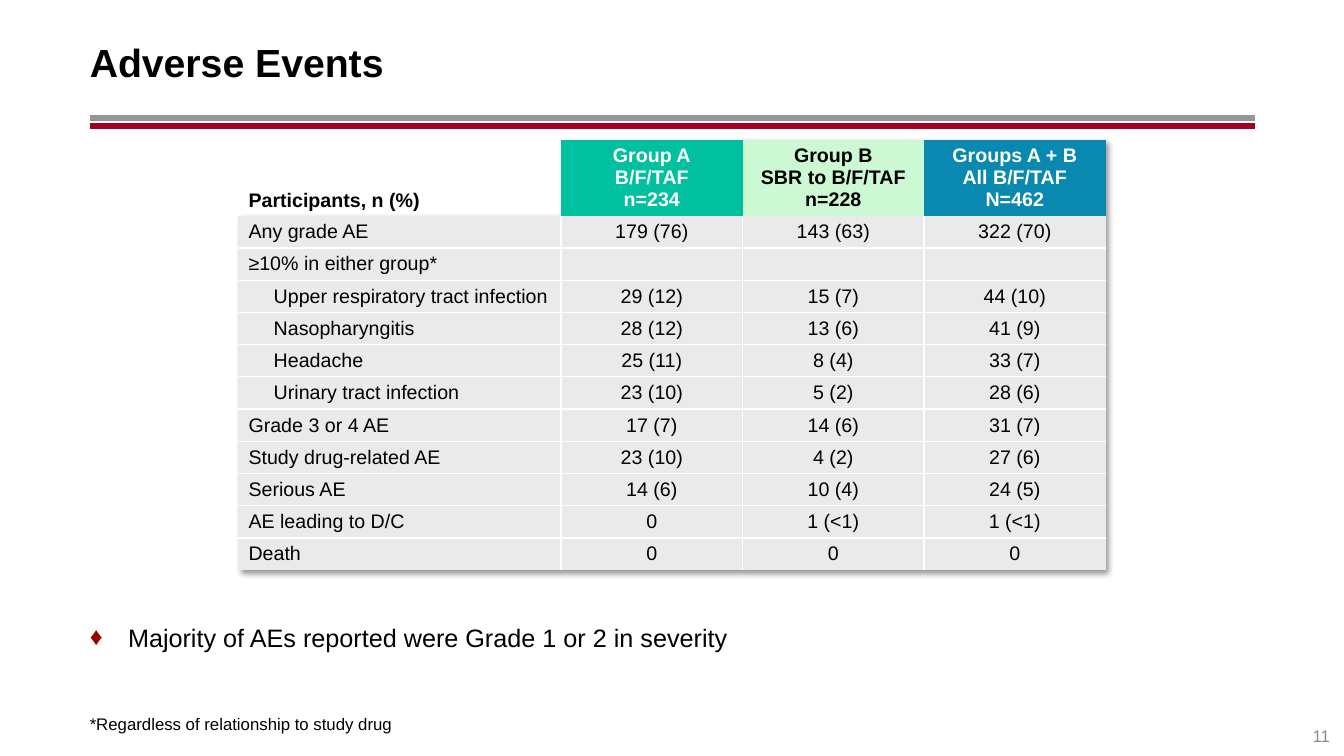
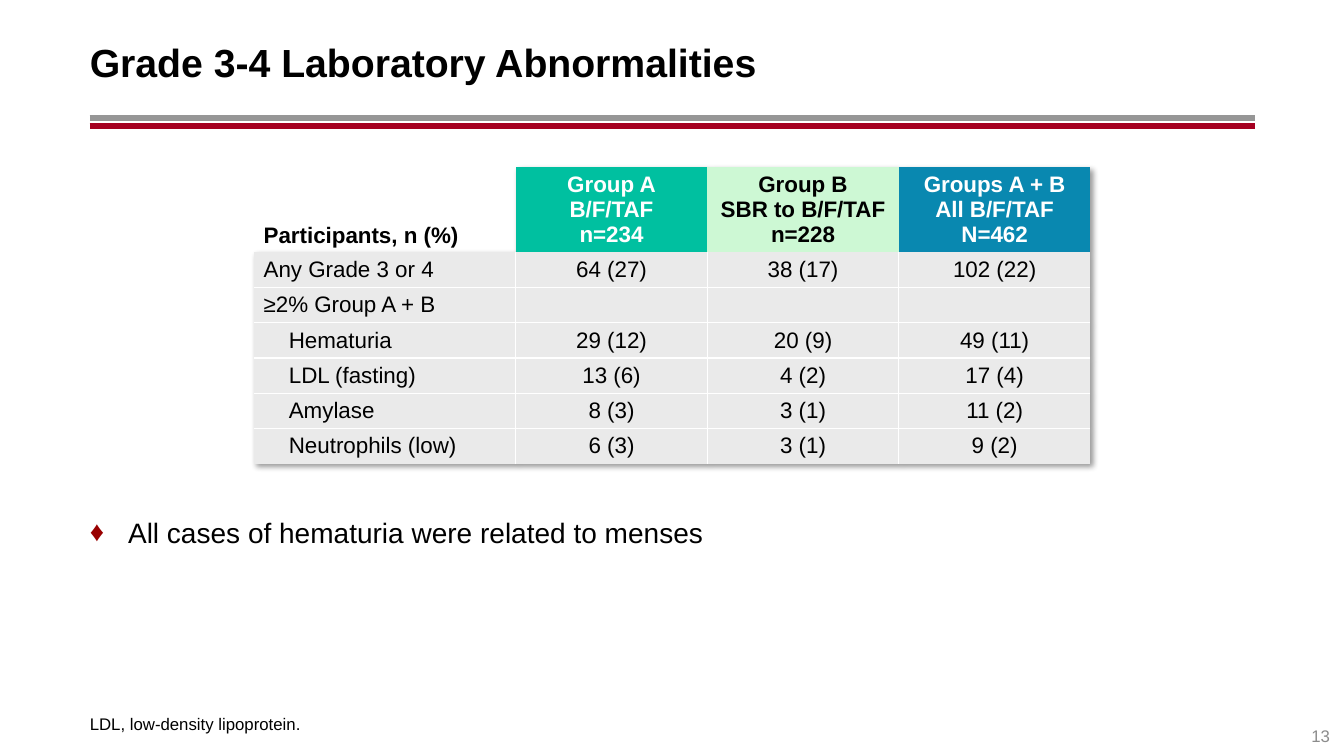
from dataclasses import dataclass

from lxml import etree
from pptx import Presentation
from pptx.dml.color import RGBColor
from pptx.enum.shapes import MSO_CONNECTOR
from pptx.enum.text import MSO_ANCHOR, MSO_AUTO_SIZE, PP_ALIGN
from pptx.oxml import parse_xml
from pptx.oxml.ns import nsdecls, qn
from pptx.util import Inches, Pt

LEFT, CENTER, RIGHT = PP_ALIGN.LEFT, PP_ALIGN.CENTER, PP_ALIGN.RIGHT
TOP, MIDDLE, BOTTOM = MSO_ANCHOR.TOP, MSO_ANCHOR.MIDDLE, MSO_ANCHOR.BOTTOM
STRAIGHT = MSO_CONNECTOR.STRAIGHT
NO_AUTOFIT = MSO_AUTO_SIZE.NONE
TWO_CONTENT_LAYOUT = 3
PLAIN_TABLE_STYLE = "{2D5ABB26-0587-4C30-8999-92F81FD0307C}"


@dataclass(frozen=True)
class Theme:
    """Colours, type sizes and the shared measures of the deck."""

    font: str = "Arial"
    ink: str = "000000"
    paper: str = "FFFFFF"
    upper_rule: str = "969696"
    lower_rule: str = "A50021"
    bullet: str = "990000"
    page_number: str = "8C8C8C"
    body_row: str = "EAEAEA"
    group_a: str = "00C0A0"
    group_b: str = "CDF8D4"
    all_groups: str = "0988B0"
    title_size: int = 28
    small_size: int = 12
    rule_weight: float = 4.25
    width: float = 13.33
    height: float = 7.5
    margin: float = 0.89
    content_width: float = 11.56
    hanging: float = 0.38
    sub_indent: float = 0.25


@dataclass(frozen=True)
class TableLayout:
    """Measures of one results table."""

    top: float
    label_width: float
    group_width: float
    header_height: float
    row_height: float
    size: int


THEME = Theme()

GROUPS = [
    (THEME.group_a, THEME.paper, [["Group A", "B/F/TAF"], ["n=234"]]),
    (THEME.group_b, THEME.ink, [["Group B", "SBR to B/F/TAF"], ["n=228"]]),
    (THEME.all_groups, THEME.paper, [["Groups A + B"], ["All B/F/TAF"], ["N=462"]]),
]

ADVERSE_EVENTS = [
    (0, "Any grade AE", "179 (76)", "143 (63)", "322 (70)"),
    (0, "≥10% in either group*", "", "", ""),
    (1, "Upper respiratory tract infection", "29 (12)", "15 (7)", "44 (10)"),
    (1, "Nasopharyngitis", "28 (12)", "13 (6)", "41 (9)"),
    (1, "Headache", "25 (11)", "8 (4)", "33 (7)"),
    (1, "Urinary tract infection", "23 (10)", "5 (2)", "28 (6)"),
    (0, "Grade 3 or 4 AE", "17 (7)", "14 (6)", "31 (7)"),
    (0, "Study drug-related AE", "23 (10)", "4 (2)", "27 (6)"),
    (0, "Serious AE", "14 (6)", "10 (4)", "24 (5)"),
    (0, "AE leading to D/C", "0", "1 (<1)", "1 (<1)"),
    (0, "Death", "0", "0", "0"),
]

LAB_ABNORMALITIES = [
    (0, "Any Grade 3 or 4", "64 (27)", "38 (17)", "102 (22)"),
    (0, "≥2% Group A + B", "", "", ""),
    (1, "Hematuria", "29 (12)", "20 (9)", "49 (11)"),
    (1, "LDL (fasting)", "13 (6)", "4 (2)", "17 (4)"),
    (1, "Amylase", "8 (3)", "3 (1)", "11 (2)"),
    (1, "Neutrophils (low)", "6 (3)", "3 (1)", "9 (2)"),
]


def rgb(color):
    """Turn a hex colour into an RGBColor."""
    return RGBColor.from_string(color)


def add_run(paragraph, text, size, color=THEME.ink, bold=False):
    """Add one formatted run to a paragraph."""
    run = paragraph.add_run()
    run.text = text
    run.font.name = THEME.font
    run.font.size = Pt(size)
    run.font.bold = bold
    run.font.color.rgb = rgb(color)


def place(shape, left, top, width, height):
    """Set the position and size of a shape in inches."""
    shape.left, shape.top = Inches(left), Inches(top)
    shape.width, shape.height = Inches(width), Inches(height)


def prepare_frame(frame, anchor, side_inset):
    """Give a text frame its anchor and insets and return its paragraph."""
    frame.word_wrap = True
    frame.auto_size = NO_AUTOFIT
    frame.vertical_anchor = anchor
    frame.margin_left = frame.margin_right = Inches(side_inset)
    frame.margin_top = frame.margin_bottom = Inches(0.05)
    return frame.paragraphs[0]


def set_bullet(paragraph, symbol=None):
    """Give a paragraph a hanging bullet, or remove the inherited one."""
    indent = Inches(THEME.hanging) if symbol else 0
    properties = paragraph._p.get_or_add_pPr()
    properties.set("marL", str(indent))
    properties.set("indent", str(-indent))
    if symbol is None:
        etree.SubElement(properties, qn("a:buNone"))
        return
    color = etree.SubElement(properties, qn("a:buClr"))
    etree.SubElement(color, qn("a:srgbClr")).set("val", THEME.bullet)
    etree.SubElement(properties, qn("a:buFont")).set("typeface", THEME.font)
    etree.SubElement(properties, qn("a:buChar")).set("char", symbol)


def add_shared_rules(slide):
    """Draw the double rule and hand it to the slide's layout."""
    layout_tree = slide.slide_layout.shapes.element
    right = THEME.margin + THEME.content_width
    for number, (y, color) in enumerate([(1.17, THEME.upper_rule), (1.25, THEME.lower_rule)]):
        rule = slide.shapes.add_connector(
            STRAIGHT, Inches(THEME.margin), Inches(y), Inches(right), Inches(y))
        rule.line.color.rgb = rgb(color)
        rule.line.width = Pt(THEME.rule_weight)
        etree.SubElement(rule.element.spPr, qn("a:effectLst"))
        rule.element.nvCxnSpPr.cNvPr.set("id", str(101 + number))
        layout_tree.append(rule.element)


def fill_title(slide, text):
    """Write the slide title."""
    title = slide.shapes.title
    place(title, THEME.margin, 0.18, THEME.content_width, 0.86)
    title.fill.solid()
    title.fill.fore_color.rgb = rgb(THEME.paper)
    paragraph = prepare_frame(title.text_frame, MIDDLE, 0)
    paragraph.alignment = LEFT
    add_run(paragraph, text, THEME.title_size, bold=True)


def fill_finding(slide, text, top, height, size):
    """Write the bulleted finding below the table."""
    finding = slide.placeholders[1]
    place(finding, THEME.margin, top, THEME.content_width, height)
    paragraph = prepare_frame(finding.text_frame, TOP, 0)
    paragraph.space_before = Pt(9)
    set_bullet(paragraph, "♦")
    add_run(paragraph, text, size)


def fill_footnote(slide, text):
    """Write the footnote at the foot of the slide."""
    footnote = slide.placeholders[2]
    place(footnote, THEME.margin, 6.83, THEME.content_width, 0.5)
    paragraph = prepare_frame(footnote.text_frame, BOTTOM, 0)
    paragraph.space_before = Pt(0)
    set_bullet(paragraph)
    add_run(paragraph, text, THEME.small_size)


def add_page_number(slide, number):
    """Add the page number in the lower right corner."""
    corner = slide.shapes.add_textbox(Inches(12.44), Inches(7.1), Inches(0.85), Inches(0.4))
    paragraph = prepare_frame(corner.text_frame, MIDDLE, 0.1)
    paragraph.alignment = RIGHT
    add_run(paragraph, str(number), THEME.small_size, THEME.page_number)


def set_borders(cell, edges):
    """Draw thin white lines on the given edges and none on the others."""
    properties = cell._tc.get_or_add_tcPr()
    for position, edge in enumerate(["L", "R", "T", "B"]):
        paint = (f'<a:solidFill><a:srgbClr val="{THEME.paper}"/></a:solidFill>'
                 if edge in edges else "<a:noFill/>")
        border = parse_xml(f'<a:ln{edge} {nsdecls("a")} w="{Pt(1)}">{paint}</a:ln{edge}>')
        properties.insert(position, border)


def fill_cell(cell, paragraphs, size, fill=None, color=THEME.ink, bold=False,
              align=CENTER, anchor=MIDDLE, level=0, edges=""):
    """Fill one table cell with paragraphs, each a list of lines."""
    cell.vertical_anchor = anchor
    cell.margin_top = cell.margin_bottom = Inches(0.04)
    if fill:
        cell.fill.solid()
        cell.fill.fore_color.rgb = rgb(fill)
    else:
        cell.fill.background()
    set_borders(cell, edges)
    frame = cell.text_frame
    for index, lines in enumerate(paragraphs):
        paragraph = frame.add_paragraph() if index else frame.paragraphs[0]
        paragraph.alignment = align
        if level:
            paragraph._p.get_or_add_pPr().set("marL", str(Inches(THEME.sub_indent * level)))
        for line_index, line in enumerate(lines):
            if line_index:
                paragraph.add_line_break()
            if line:
                add_run(paragraph, line, size, color, bold)
            else:
                end = etree.SubElement(paragraph._p, qn("a:endParaRPr"))
                end.set("sz", str(size * 100))


def style_table(table):
    """Replace the banded style with a plain one that casts a shadow."""
    table.horz_banding = False
    table.first_row = False
    properties = table._tbl.tblPr
    properties.find(qn("a:tableStyleId")).text = PLAIN_TABLE_STYLE
    properties.insert(0, parse_xml(
        f'<a:effectLst {nsdecls("a")}><a:outerShdw blurRad="{Pt(4)}" dist="{Pt(3)}" '
        'dir="2700000" algn="tl" rotWithShape="0"><a:srgbClr val="000000">'
        '<a:alpha val="40000"/></a:srgbClr></a:outerShdw></a:effectLst>'))


def add_results_table(slide, results, layout):
    """Add a centred table of participants by treatment group."""
    widths = [layout.label_width] + [layout.group_width] * len(GROUPS)
    heights = [layout.header_height] + [layout.row_height] * len(results)
    left = (THEME.width - sum(widths)) / 2
    table = slide.shapes.add_table(
        len(heights), len(widths), Inches(left), Inches(layout.top),
        Inches(sum(widths)), Inches(sum(heights))).table
    style_table(table)
    for column, width in zip(table.columns, widths):
        column.width = Inches(width)
    for row, height in zip(table.rows, heights):
        row.height = Inches(height)

    fill_cell(table.cell(0, 0), [["Participants, n (%)"]], layout.size,
              bold=True, align=LEFT, anchor=BOTTOM)
    for column, (fill, color, heading) in enumerate(GROUPS, start=1):
        fill_cell(table.cell(0, column), heading, layout.size, fill, color, bold=True)
    for row, (level, *texts) in enumerate(results, start=1):
        for column, text in enumerate(texts):
            edges = (("L" if column else "") + ("R" if column < len(GROUPS) else "")
                     + ("T" if row > 1 else "") + ("B" if row < len(results) else ""))
            fill_cell(table.cell(row, column), [[text]], layout.size, THEME.body_row,
                      align=CENTER if column else LEFT,
                      level=0 if column else level, edges=edges)


def add_results_slide(deck, title, footnote, number):
    """Add a slide with the title, footnote and page number all slides share."""
    slide = deck.slides.add_slide(deck.slide_layouts[TWO_CONTENT_LAYOUT])
    fill_title(slide, title)
    fill_footnote(slide, footnote)
    add_page_number(slide, number)
    return slide


def main():
    """Build and save the deck."""
    deck = Presentation()
    deck.slide_width, deck.slide_height = Inches(THEME.width), Inches(THEME.height)

    events = add_results_slide(
        deck, "Adverse Events", "*Regardless of relationship to study drug", 11)
    add_shared_rules(events)
    add_results_table(events, ADVERSE_EVENTS, TableLayout(1.39, 3.2, 1.8, 0.75, 0.32, 14))
    fill_finding(events, "Majority of AEs reported were Grade 1 or 2 in severity", 6.12, 0.58, 18)

    labs = add_results_slide(
        deck, "Grade 3-4 Laboratory Abnormalities", "LDL, low-density lipoprotein.", 13)
    add_results_table(labs, LAB_ABNORMALITIES, TableLayout(1.66, 2.6, 1.9, 0.84, 0.35, 16))
    fill_finding(labs, "All cases of hematuria were related to menses", 5.06, 1.24, 20)

    deck.save("out.pptx")


if __name__ == "__main__":
    main()
